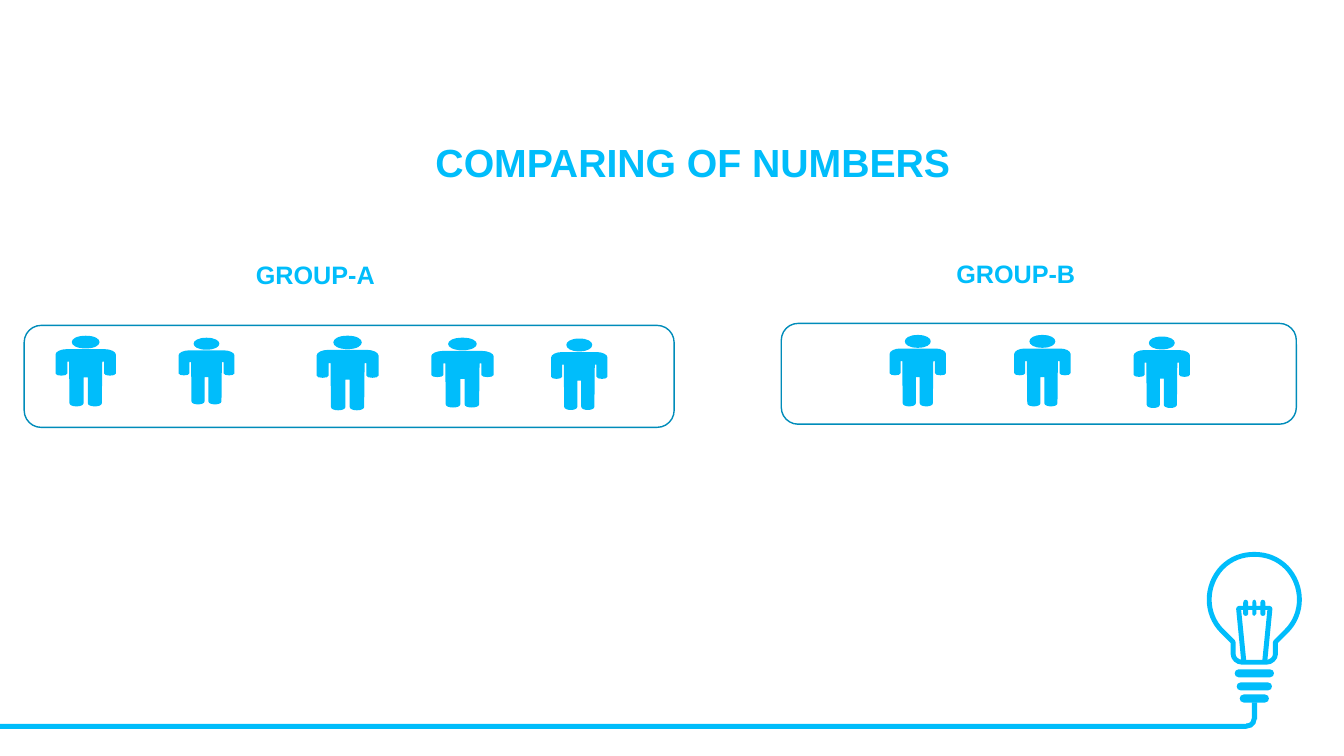
from pptx import Presentation, util as u
from pptx.dml.color import RGBColor
from pptx.enum import shapes, text
from pptx.oxml import ns, xmlchemy

COLORS = {"sky": "00BDFB", "frame": "008CBA", "white": "FFFFFF"}
PERSON_UNITS = 1000  # a person is outlined in a 1000 x 1000 box
BULB_SCALE = u.Cm(2.54) / 1000

# Right halves of symmetric outlines: pairs are lines, sixes are Bezier curves
PERSON_HEAD = [(500, 0), (807, 0, 807, 180, 500, 180)]
PERSON_BODY = [
    (500, 190), (815, 190), (910, 190, 1000, 225, 1000, 265), (1000, 535),
    (1000, 575, 805, 575, 805, 535), (805, 367), (775, 367), (768, 955),
    (768, 1015, 535, 1015, 535, 955), (535, 590),
]
BULB_GLASS = [
    (0, 0), (120, 0, 230, 40, 320, 130), (490, 310, 490, 590, 320, 760),
    (210, 870), (210, 990), (210, 1030, 170, 1070, 120, 1070),
]
BULB_FILAMENT = [
    (0, 450), (10, 450, 20, 460, 20, 480), (20, 510), (60, 510), (60, 480),
    (60, 440, 110, 440, 110, 480), (110, 510), (150, 510),
    (170, 510, 180, 530, 180, 540), (130, 1050), (130, 1080, 80, 1080, 80, 1050),
    (130, 550), (110, 550), (110, 590), (110, 617, 60, 617, 60, 590),
    (60, 550), (20, 550), (20, 590), (20, 600, 10, 610, 0, 610),
]


def screw_ring(half_width, top):
    flat, bottom = half_width - 40, top + 80
    return [(0, top), (flat, top),
            (flat + 53, top, flat + 53, bottom, flat, bottom), (0, bottom)]


def paint(shape, fill=None, line=None, width=1):
    shape.shadow.inherit = False
    if fill:
        shape.fill.solid()
        shape.fill.fore_color.rgb = RGBColor.from_string(COLORS[fill])
    else:
        shape.fill.background()
    if line:
        shape.line.color.rgb = RGBColor.from_string(COLORS[line])
        shape.line.width = u.Pt(width)
    else:
        shape.line.fill.background()


def bend_lines(shape, point_counts):
    """Join each run of three line points that belongs to a curve."""
    lines = iter(list(shape.element.iter(ns.qn("a:lnTo"))))
    for count in point_counts:
        segment = [next(lines) for _ in range(count)]
        if count == 3:
            curve = xmlchemy.OxmlElement("a:cubicBezTo")
            segment[0].addprevious(curve)
            for line in segment:
                curve.append(line[0])
                line.getparent().remove(line)


def add_symmetric(slide, halves, left, top, scale, axis=0):
    """Draw each half outline together with its mirror image."""
    builder, point_counts = None, []
    for half in halves:
        right = [step[i:i + 2] for step in half for i in range(0, len(step), 2)]
        outline = right + [(2 * axis - x, y) for x, y in reversed(right)]
        counts = [len(step) // 2 for step in half[1:]]
        point_counts += counts + [1] + counts[::-1]
        if builder is None:
            builder = slide.shapes.build_freeform(*outline[0], scale=scale)
        else:
            builder.move_to(*outline[0])
        builder.add_line_segments(outline[1:], close=True)
    shape = builder.convert_to_shape(u.Cm(left), u.Cm(top))
    bend_lines(shape, point_counts)
    return shape


def add_person(slide, left, top, width=1.42, height=1.8):
    scale = (u.Cm(width) / PERSON_UNITS, u.Cm(height) / PERSON_UNITS)
    person = add_symmetric(slide, [PERSON_BODY, PERSON_HEAD], left, top, scale,
                           axis=PERSON_UNITS // 2)
    paint(person, fill="sky")


def add_preset(slide, preset, left, top, width, height, **colors):
    shape = slide.shapes.add_shape(preset, *map(u.Cm, (left, top, width, height)))
    paint(shape, **colors)
    return shape


def add_label(slide, words, left, top, width, height, size):
    label = slide.shapes.add_textbox(*map(u.Cm, (left, top, width, height)))
    label.text_frame.word_wrap = True
    paragraph = label.text_frame.paragraphs[0]
    paragraph.text = words
    font = paragraph.font
    font.name, font.size, font.bold = "Arial", u.Pt(size), True
    font.color.rgb = RGBColor.from_string(COLORS["sky"])
    return label


def add_lamp(slide):
    preset = shapes.MSO_SHAPE
    center, top = 31.61, 13.97
    glass = add_symmetric(slide, [BULB_GLASS], center, top, BULB_SCALE)
    paint(glass, fill="white", line="sky", width=3.5)
    rings = [screw_ring(195, 1140), screw_ring(175, 1270), screw_ring(145, 1390)]
    for halves in (rings, [BULB_FILAMENT]):
        paint(add_symmetric(slide, halves, center, top, BULB_SCALE), fill="sky")
    # Cable
    add_preset(slide, preset.RECTANGLE, 0, 18.24, 31.42, 0.13, fill="sky")
    add_preset(slide, preset.RECTANGLE, 31.55, 17.7, 0.13, 0.43, fill="sky")
    bend = add_preset(slide, preset.BLOCK_ARC, 31.19, 17.88, 0.48, 0.48, fill="sky")
    for i, value in enumerate((213.39, 60.92, 0.27)):
        bend.adjustments[i] = value


def add_group(slide, frame, people):
    for person in people:
        add_person(slide, *person)
    add_preset(slide, shapes.MSO_SHAPE.ROUNDED_RECTANGLE, *frame, line="frame")


def main():
    deck = Presentation()
    deck.slide_width, deck.slide_height = u.Cm(33.87), u.Cm(19.05)
    slide = deck.slides.add_slide(deck.slide_layouts[6])

    add_lamp(slide)

    # Groups to compare
    add_group(slide, (0.61, 8.2, 16.38, 2.57), [
        (1.4, 8.46, 1.52, 1.78), (4.5, 8.51, 1.41, 1.68), (7.98, 8.46, 1.56, 1.88),
        (10.87, 8.51, 1.57, 1.76), (13.89, 8.53)])
    add_group(slide, (19.69, 8.15, 12.98, 2.54),
              [(22.42, 8.44), (25.56, 8.44), (28.57, 8.48)])

    # Headings
    add_label(slide, "GROUP-A", 6.2, 6.4, 3.68, 1.02, 18)
    add_label(slide, "GROUP-B", 23.85, 6.38, 4.85, 1.02, 18)
    title = add_label(slide, "COMPARING OF NUMBERS", 9.88, 3.15, 15.16, 2.01, 28)
    title.text_frame.vertical_anchor = text.MSO_ANCHOR.MIDDLE
    title.text_frame.paragraphs[0].alignment = text.PP_ALIGN.CENTER
    title.text_frame.paragraphs[0].line_spacing = 0.9

    deck.save("out.pptx")


if __name__ == "__main__":
    main()
